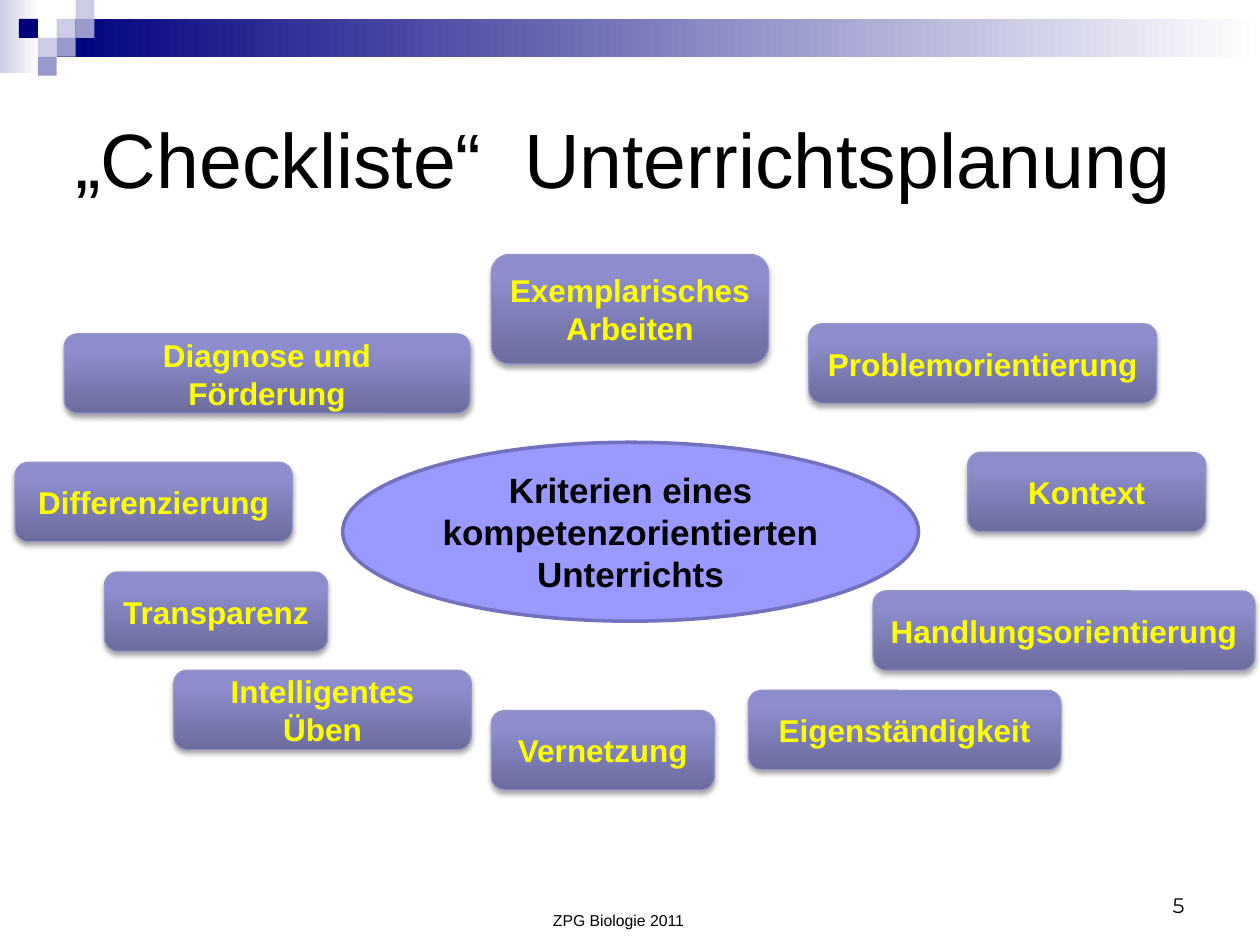
from lxml.etree import SubElement
from pptx import Presentation
from pptx.dml.color import RGBColor
from pptx.enum.shapes import MSO_SHAPE
from pptx.enum.text import MSO_ANCHOR, PP_ALIGN
from pptx.oxml.ns import qn
from pptx.util import Inches, Pt

BLACK = RGBColor(0, 0, 0)
WHITE = RGBColor(255, 255, 255)
YELLOW = RGBColor(255, 255, 0)
NAVY = RGBColor(0x00, 0x00, 0x7D)
PALE = RGBColor(0xCC, 0xCC, 0xE6)
LILAC = RGBColor(0x99, 0x99, 0xCC)
VIOLET = RGBColor(0x99, 0x99, 0xFF)
RIM = RGBColor(0x71, 0x71, 0xBD)
EDGE = RGBColor(0x94, 0x94, 0xC9)
SHADE = [
    (0, RGBColor(0x6C, 0x6C, 0x9E)),
    (80, RGBColor(0x8D, 0x8D, 0xCD)),
    (100, RGBColor(0x8C, 0x8C, 0xCF)),
]

TITLE = "„Checkliste“  Unterrichtsplanung"
CENTER = "Kriterien eines kompetenzorientierten Unterrichts"
FOOTER = "ZPG Biologie 2011"
NUMBER = "5"

BANDS = [
    ((0, 0, 0.31, 0.58), PALE),
    ((0.45, 0.15, 9.55, 0.3), NAVY),
]
UNIT = 0.15
TILES = [
    (3, 1, PALE),
    (4, 0, PALE),
    (4, 1, LILAC),
    (2, 2, PALE),
    (1, 1, NAVY),
    (3, 2, LILAC),
    (2, 3, LILAC),
]
HIGH = 0.63
TOPICS = [
    ("Problemorientierung", 6.42, 2.57, 2.76, HIGH),
    ("Intelligentes Üben", 1.38, 5.32, 2.36, HIGH),
    ("Differenzierung", 0.12, 3.67, 2.2, HIGH),
    ("Handlungsorientierung", 6.93, 4.69, 3.03, HIGH),
    ("Vernetzung", 3.9, 5.64, 1.77, HIGH),
    ("Kontext", 7.68, 3.59, 1.89, HIGH),
    ("Diagnose und Förderung", 0.51, 2.65, 3.22, HIGH),
    ("Transparenz", 0.83, 4.54, 1.77, HIGH),
    ("Eigenständigkeit", 5.94, 5.48, 2.48, HIGH),
    ("Exemplarisches\nArbeiten", 3.9, 2.02, 2.2, 0.87),
]


def add_shape(slide, kind, area, color=None):
    shape = slide.shapes.add_shape(kind, *map(Inches, area))
    shape.shadow.inherit = False
    shape.line.fill.background()
    if color is not None:
        shape.fill.solid()
        shape.fill.fore_color.rgb = color
    return shape


def set_line(shape, color, width):
    shape.line.color.rgb = color
    shape.line.width = Pt(width)


def blend(shape, stops, angle):
    shape.fill.gradient()
    shape.fill.gradient_angle = angle
    group = next(shape.element.spPr.iter(qn("a:gsLst")))
    for stop in list(group):
        group.remove(stop)
    for place, color in stops:
        stop = SubElement(group, qn("a:gs"), pos=str(place * 1000))
        SubElement(stop, qn("a:srgbClr"), val=str(color))


def add_shadow(shape):
    effects = shape.element.spPr.find(qn("a:effectLst"))
    shadow = SubElement(
        effects, qn("a:outerShdw"), blurRad=str(Pt(3.1)), dist=str(Pt(1.8)),
        dir=str(90 * 60000), rotWithShape="0",
    )
    color = SubElement(shadow, qn("a:srgbClr"), val=str(BLACK))
    SubElement(color, qn("a:alpha"), val="35000")


def set_text(shape, text, size, color=BLACK, bold=False, align=PP_ALIGN.CENTER,
             anchor=MSO_ANCHOR.MIDDLE, face="Arial"):
    frame = shape.text_frame
    frame.word_wrap = True
    frame.vertical_anchor = anchor
    para = frame.paragraphs[0]
    para.text = text.replace("\n", "\v")
    para.alignment = align
    for run in para.runs:
        run.font.size = Pt(size)
        run.font.name = face
        run.font.bold = bold
        run.font.color.rgb = color


def add_text(slide, area, text, size, **style):
    set_text(slide.shapes.add_textbox(*map(Inches, area)), text, size, **style)


def main():
    deck = Presentation()
    deck.slide_width, deck.slide_height = Inches(10), Inches(7.5)
    slide = deck.slides.add_slide(deck.slide_layouts[6])

    for area, color in BANDS:
        band = add_shape(slide, MSO_SHAPE.RECTANGLE, area)
        blend(band, [(0, color), (100, WHITE)], 0)
    for col, row, color in TILES:
        area = (col * UNIT, row * UNIT, UNIT, UNIT)
        add_shape(slide, MSO_SHAPE.RECTANGLE, area, color)

    add_text(slide, (0.5, 0.5, 9, 1.5), TITLE, 44, align=PP_ALIGN.LEFT)

    for name, *area in TOPICS:
        box = add_shape(slide, MSO_SHAPE.ROUNDED_RECTANGLE, area)
        blend(box, SHADE, 90)
        set_line(box, EDGE, 0.75)
        add_shadow(box)
        set_text(box, name, 18, color=YELLOW, bold=True)

    add_text(slide, (4.29, 7.14, 2.17, 0.32), FOOTER, 9, align=PP_ALIGN.LEFT)

    oval = add_shape(slide, MSO_SHAPE.OVAL, (2.72, 3.51, 4.57, 1.42), VIOLET)
    set_line(oval, RIM, 2)
    set_text(oval, CENTER, 20, bold=True)

    add_text(slide, (7.17, 6.83, 2.33, 0.5), NUMBER, 12, align=PP_ALIGN.RIGHT,
             anchor=MSO_ANCHOR.BOTTOM, face="Montserrat")
    deck.save("out.pptx")


if __name__ == "__main__":
    main()
